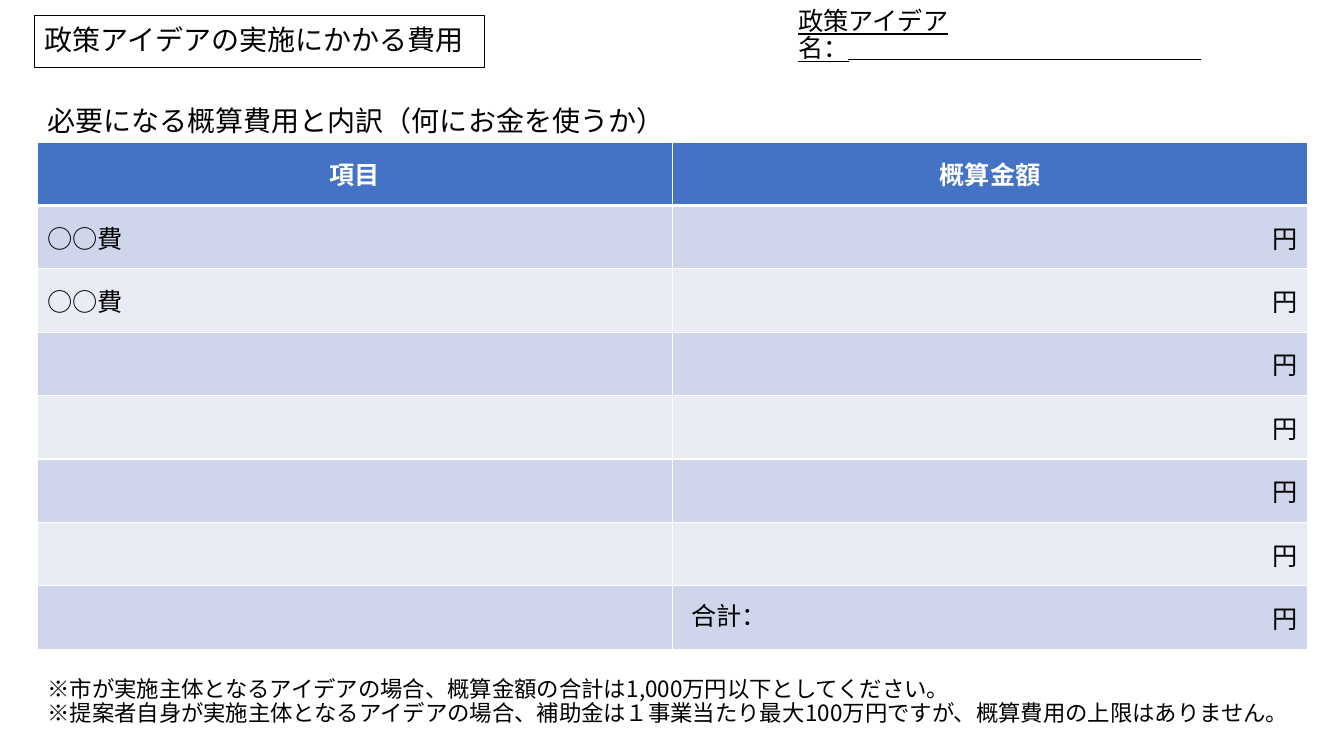
import dataclasses
import lxml.etree
import pptx
import pptx.dml.color
import pptx.enum.shapes
import pptx.enum.text
import pptx.oxml.ns
import pptx.util

ALIGN = pptx.enum.text.PP_ALIGN
ANCHOR = pptx.enum.text.MSO_ANCHOR


@dataclasses.dataclass(frozen=True)
class Theme:
    font: str = "Noto Sans CJK JP"
    ink: str = "000000"
    paper: str = "FFFFFF"
    head: str = "4472C4"
    bands: tuple = ("CFD5EA", "E9EBF5")
    big: int = 20
    mid: int = 18
    small: int = 16
    lead: float = 1.08
    thin: float = 0.75
    rule: int = 1
    thick: int = 3


THEME = Theme()
WIDTH = pptx.util.Inches(13.33)
HEIGHT = pptx.util.Inches(7.5)
LEFT, FULL = 2.78, 94.52
TOP, BAND = 2, 6.93


def color(code):
    return pptx.dml.color.RGBColor.from_string(code)


def across(share):
    return round(WIDTH * share / 100)


def down(share):
    return round(HEIGHT * share / 100)


def area(left, top, width, height):
    return across(left), down(top), across(width), down(height)


def node(parent, tag, **attrs):
    return lxml.etree.SubElement(parent, pptx.oxml.ns.qn(tag), **attrs)


def add_run(para, text, size, ink=THEME.ink, bold=False, under=False):
    run = para.add_run()
    run.text = text
    font = run.font
    font.name, font.size, font.bold = THEME.font, pptx.util.Pt(size), bold
    font.underline = under or None
    font.color.rgb = color(ink)
    node(font._element, "a:ea", typeface=THEME.font)


def fill_text(shape, lines, size, anchor=ANCHOR.TOP, under=False):
    frame = shape.text_frame
    frame.word_wrap = True
    frame.auto_size = pptx.enum.text.MSO_AUTO_SIZE.NONE
    frame.vertical_anchor = anchor
    for index, parts in enumerate(lines):
        para = frame.add_paragraph() if index else frame.paragraphs[0]
        props = para._p.get_or_add_pPr()
        props.set("marL", "0")
        props.set("indent", "0")
        node(props, "a:buNone")
        para.alignment = ALIGN.LEFT
        para.space_before = pptx.util.Pt(0)
        para.line_spacing = pptx.util.Pt(round(size * THEME.lead, 1))
        for step, part in enumerate(parts):
            if step:
                para.add_line_break()
            add_run(para, part, size, under=under)


def set_place(shape, box):
    shape.left, shape.top, shape.width, shape.height = box


def add_label(slide, box, parts, size, **style):
    label = slide.shapes.add_textbox(*box)
    fill_text(label, [parts], size, **style)


def add_rule(slide, start, end, level):
    line = slide.shapes.add_connector(
        pptx.enum.shapes.MSO_CONNECTOR.STRAIGHT,
        across(start), down(level), across(end), down(level))
    line.line.color.rgb = color(THEME.ink)
    line.line.width = pptx.util.Pt(THEME.thin)
    node(line._element.spPr, "a:effectLst")


def set_edges(cell, row):
    props = cell._tc.get_or_add_tcPr()
    widths = {"L": THEME.rule, "R": THEME.rule,
              "T": THEME.thick if row == 1 else THEME.rule,
              "B": THEME.thick if row == 0 else THEME.rule}
    for side, width in widths.items():
        edge = node(props, "a:ln" + side, w=str(pptx.util.Pt(width)))
        node(node(edge, "a:solidFill"), "a:srgbClr", val=THEME.paper)


def add_costs(slide, box, rows):
    table = slide.shapes.add_table(len(rows), len(rows[0]), *box).table
    for row, texts in enumerate(rows):
        head = row == 0
        for col, text in enumerate(texts):
            cell = table.cell(row, col)
            set_edges(cell, row)
            cell.fill.solid()
            cell.fill.fore_color.rgb = color(
                THEME.head if head else THEME.bands[(row - 1) % 2])
            cell.vertical_anchor = ANCHOR.MIDDLE
            para = cell.text_frame.paragraphs[0]
            para.alignment = ALIGN.CENTER if head else (ALIGN.LEFT, ALIGN.RIGHT)[col]
            if text:
                add_run(para, text, THEME.mid,
                        THEME.paper if head else THEME.ink, head)


def main():
    deck = pptx.Presentation()
    deck.slide_width, deck.slide_height = WIDTH, HEIGHT
    slide = deck.slides.add_slide(deck.slide_layouts[1])
    title, notes = slide.placeholders

    items = ["○○費"] * 2 + [""] * 5
    rows = [("項目", "概算金額")] + [(item, "円") for item in items]
    add_costs(slide, area(LEFT, 18.8, FULL, 67.07), rows)

    add_label(slide, area(LEFT, 13.47, 59.71, 7.73),
              ["必要になる概算費用と内訳（何にお金を使うか）"], THEME.big)
    add_label(slide, area(50.71, 79.2, 7.95, 5.33), ["合計："], THEME.mid)
    add_label(slide, area(58.66, TOP, 41.34, BAND), ["政策アイデア", "名："],
              THEME.mid, anchor=ANCHOR.BOTTOM, under=True)
    add_rule(slide, 63.1, 89.35, 7.9)

    set_place(title, area(2.55, TOP, 33.53, BAND))
    title.line.color.rgb = color(THEME.ink)
    title.line.width = pptx.util.Pt(THEME.thin)
    fill_text(title, [["政策アイデアの実施にかかる費用"]], THEME.big, ANCHOR.MIDDLE)

    set_place(notes, area(LEFT, 88.93, FULL, 8.93))
    fill_text(notes, [
        ["※市が実施主体となるアイデアの場合、概算金額の合計は1,000万円以下としてください。"],
        ["※提案者自身が実施主体となるアイデアの場合、補助金は１事業当たり最大100万円ですが、"
         "概算費用の上限はありません。"],
    ], THEME.small)
    deck.save("out.pptx")


if __name__ == "__main__":
    main()
